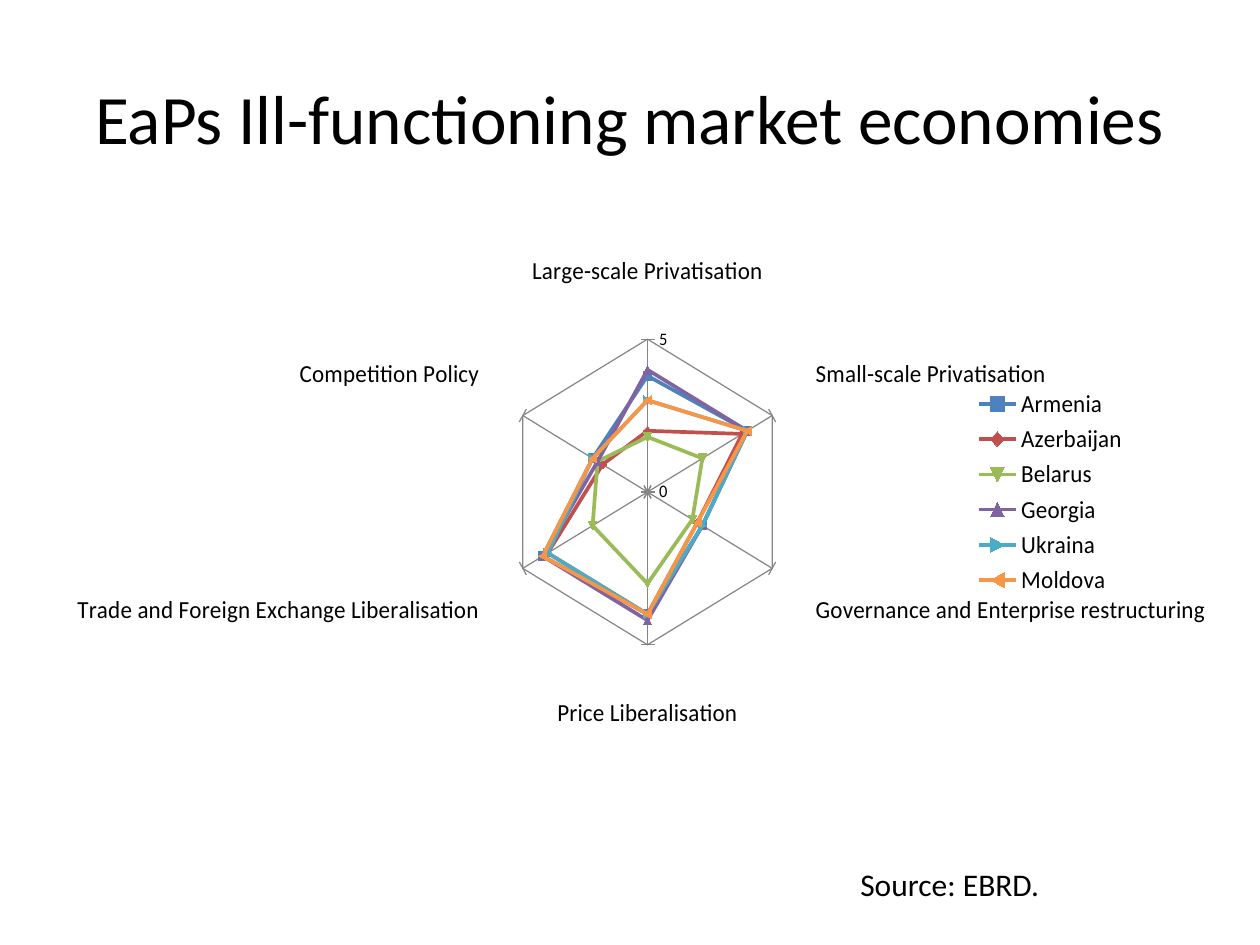
import dataclasses

import pptx
import pptx.chart.data
import pptx.dml.color
import pptx.enum.chart
import pptx.enum.text
import pptx.util
from pptx.util import Inches

FONT = "Calibri"
COLOURS = {
    "text": "000000",
    "axis": "868686",
    "Armenia": "4F81BD",
    "Azerbaijan": "C0504D",
    "Belarus": "9BBB59",
    "Georgia": "8064A2",
    "Ukraina": "4BACC6",
    "Moldova": "F79646",
}
INDICATORS = [
    "Large-scale Privatisation",
    "Small-scale Privatisation",
    "Governance and Enterprise restructuring",
    "Price Liberalisation",
    "Trade and Foreign Exchange Liberalisation",
    "Competition Policy",
]
SCORES = {
    "Armenia": (3.8, 4, 2.2, 4, 4.2, 2.2),
    "Azerbaijan": (2, 3.8, 2, 4, 4, 1.8),
    "Belarus": (1.8, 2.2, 1.8, 3, 2.2, 2),
    "Georgia": (4, 4, 2.2, 4.2, 4.2, 2),
    "Ukraina": (3, 4, 2.2, 4, 4, 2.2),
    "Moldova": (3, 4, 2, 4, 4.2, 2.2),
}


@dataclasses.dataclass
class Label:
    text: str
    left: float
    top: float
    width: float
    height: float
    size: float
    wrap: bool
    align: pptx.enum.text.PP_ALIGN
    anchor: pptx.enum.text.MSO_ANCHOR


LABELS = [
    Label("EaPs Ill-functioning market economies", 0.5, 0.3, 9, 1.25, 39.6, True,
          pptx.enum.text.PP_ALIGN.CENTER, pptx.enum.text.MSO_ANCHOR.MIDDLE),
    Label("Source: EBRD.", 6.73, 6.82, 1.64, 0.4, 18, False,
          pptx.enum.text.PP_ALIGN.LEFT, pptx.enum.text.MSO_ANCHOR.TOP),
]


def colour(name: str) -> pptx.dml.color.RGBColor:
    return pptx.dml.color.RGBColor.from_string(COLOURS[name])


def style_font(font, size: float) -> None:
    font.name = FONT
    font.size = pptx.util.Pt(size)
    font.color.rgb = colour("text")


def style_line(line, name: str, width: float) -> None:
    line.color.rgb = colour(name)
    line.width = pptx.util.Pt(width)


def add_label(page, label: Label) -> None:
    box = page.shapes.add_textbox(Inches(label.left), Inches(label.top),
                                  Inches(label.width), Inches(label.height))
    frame = box.text_frame
    frame.text = label.text
    frame.word_wrap = label.wrap
    frame.vertical_anchor = label.anchor
    para = frame.paragraphs[0]
    para.alignment = label.align
    style_font(para.runs[0].font, label.size)


def add_radar(page) -> None:
    data = pptx.chart.data.CategoryChartData()
    data.categories = INDICATORS
    for country, scores in SCORES.items():
        data.add_series(country, scores)
    chart = page.shapes.add_chart(
        pptx.enum.chart.XL_CHART_TYPE.RADAR_MARKERS,
        Inches(0.51), Inches(0.6), Inches(9.06), Inches(6.61), data).chart
    chart.has_title = False
    style_font(chart.font, 10)

    # Series lines
    for series in chart.plots[0].series:
        style_line(series.format.line, series.name, 2.25)
        series.smooth = False

    # Axes
    for axis, size in ((chart.category_axis, 14), (chart.value_axis, 10)):
        axis.has_major_gridlines = True
        axis.major_tick_mark = pptx.enum.chart.XL_TICK_MARK.CROSS
        style_line(axis.format.line, "axis", 0.75)
        style_line(axis.major_gridlines.format.line, "axis", 0.75)
        style_font(axis.tick_labels.font, size)
    chart.value_axis.minimum_scale = 0
    chart.value_axis.maximum_scale = 5
    chart.value_axis.major_unit = 5

    # Legend
    chart.has_legend = True
    legend = chart.legend
    legend.position = pptx.enum.chart.XL_LEGEND_POSITION.RIGHT
    legend.include_in_layout = False
    style_font(legend.font, 14)


def main() -> None:
    deck = pptx.Presentation()
    deck.slide_width = Inches(10)
    deck.slide_height = Inches(7.5)
    page = deck.slides.add_slide(deck.slide_layouts[6])
    title, source = LABELS
    add_label(page, title)
    add_radar(page)
    add_label(page, source)
    deck.save("out.pptx")


if __name__ == "__main__":
    main()
